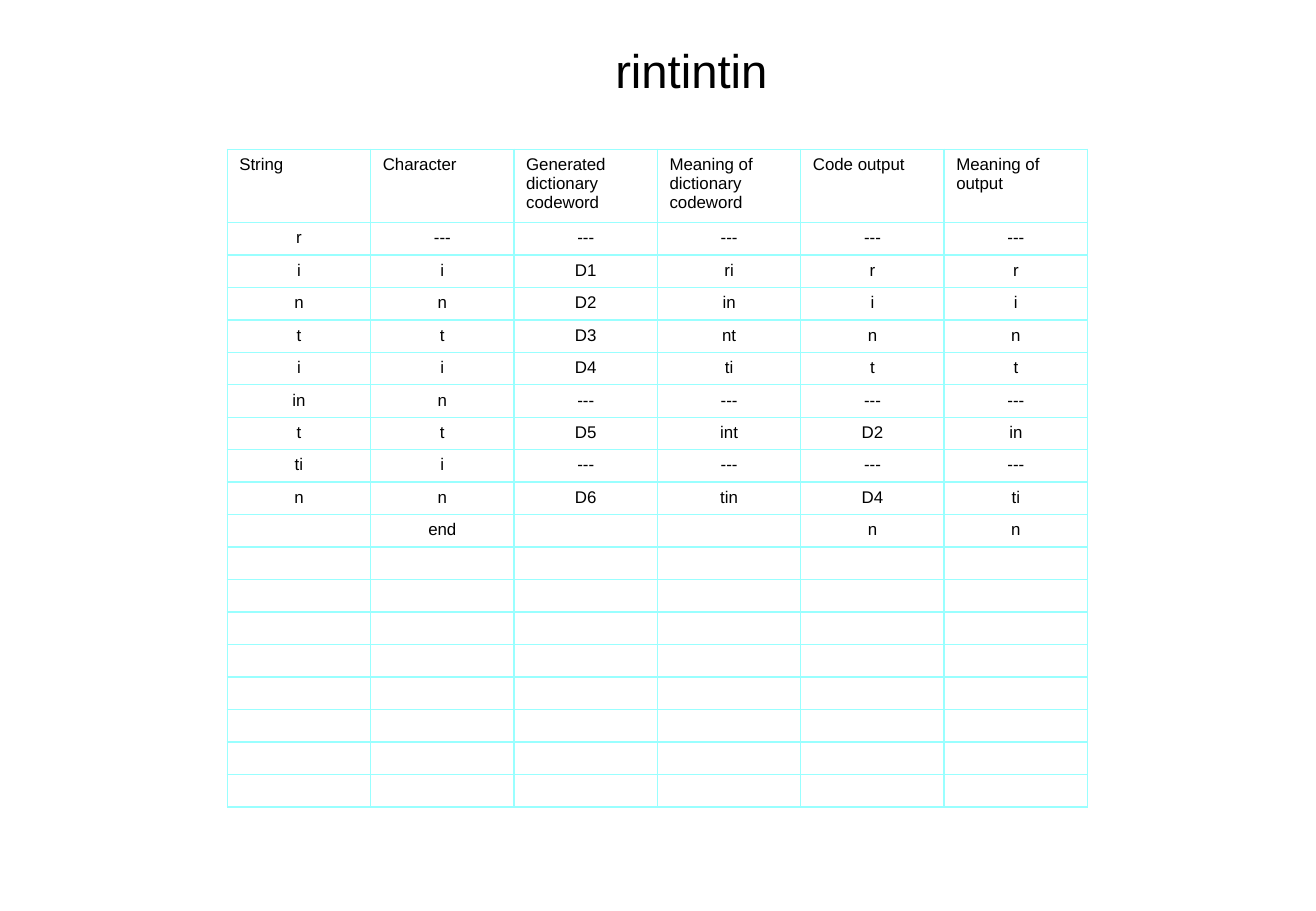
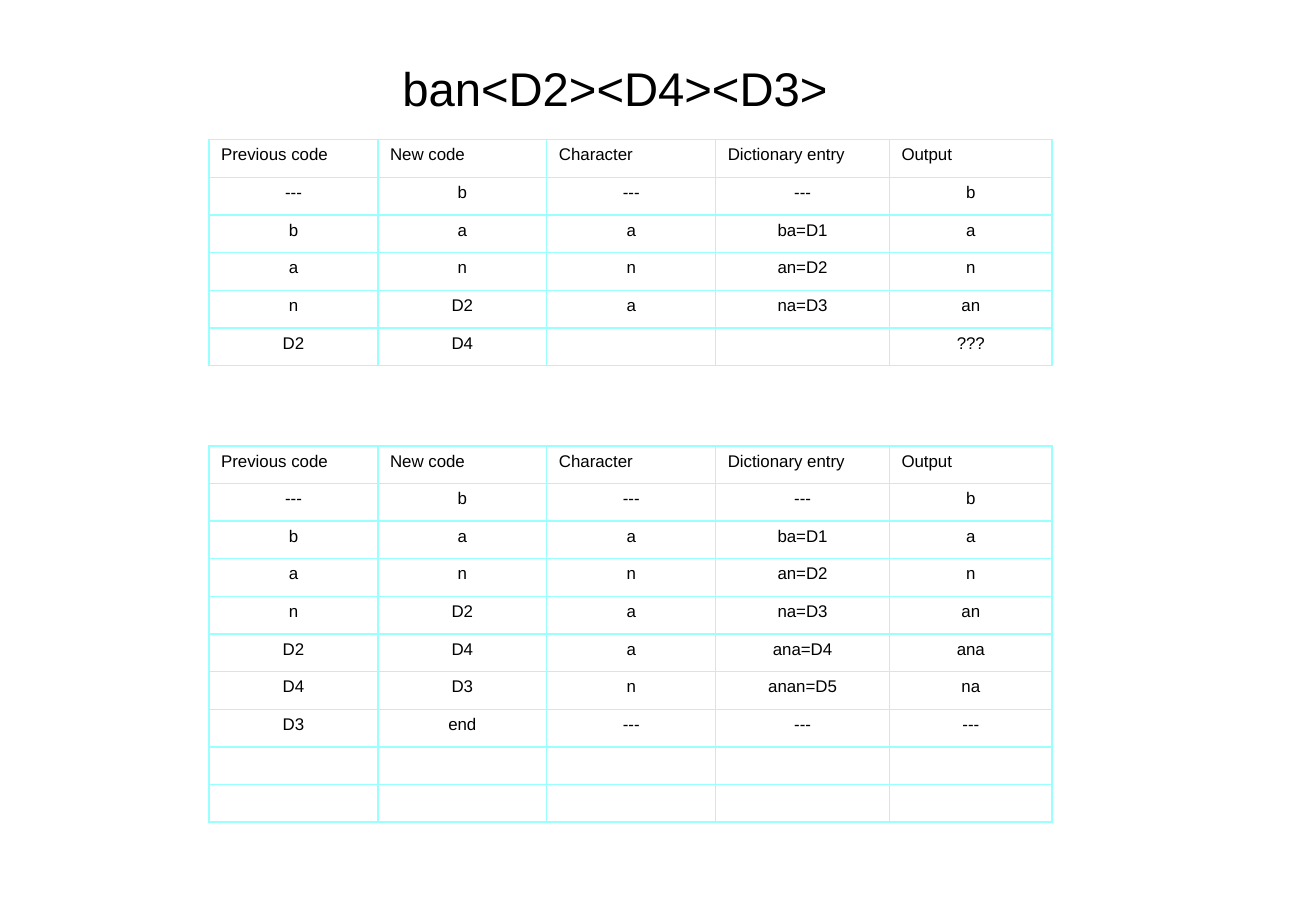
"""Build two slides that trace dictionary compression and decompression."""
from lxml import etree
from pptx import Presentation
from pptx.dml.color import RGBColor
from pptx.enum.text import MSO_AUTO_SIZE, PP_ALIGN
from pptx.oxml.ns import qn
from pptx.util import Inches, Pt

LEFT, CENTER = PP_ALIGN.LEFT, PP_ALIGN.CENTER
FIT_SHAPE = MSO_AUTO_SIZE.SHAPE_TO_FIT_TEXT
BLACK = RGBColor(0x00, 0x00, 0x00)
WHITE = RGBColor(0xFF, 0xFF, 0xFF)
CYAN = RGBColor(0x99, 0xFF, 0xFF)
FONT = "Arial"
TITLE_SIZE, CELL_SIZE, BORDER = Pt(28), Pt(10), Pt(1)

ENCODE_HEADER = ("String", "Character", "Generated dictionary codeword",
                 "Meaning of dictionary codeword", "Code output", "Meaning of output")
ENCODE_STEPS = [
    ("r", "---", "---", "---", "---", "---"),
    ("i", "i", "D1", "ri", "r", "r"),
    ("n", "n", "D2", "in", "i", "i"),
    ("t", "t", "D3", "nt", "n", "n"),
    ("i", "i", "D4", "ti", "t", "t"),
    ("in", "n", "---", "---", "---", "---"),
    ("t", "t", "D5", "int", "D2", "in"),
    ("ti", "i", "---", "---", "---", "---"),
    ("n", "n", "D6", "tin", "D4", "ti"),
    ("", "end", "", "", "n", "n"),
]
DECODE_HEADER = ("Previous code", "New code", "Character", "Dictionary entry", "Output")
DECODE_START = [
    ("---", "b", "---", "---", "b"),
    ("b", "a", "a", "ba=D1", "a"),
    ("a", "n", "n", "an=D2", "n"),
    ("n", "D2", "a", "na=D3", "an"),
]
DECODE_STUCK = DECODE_START + [("D2", "D4", "", "", "???")]
DECODE_SOLVED = DECODE_START + [
    ("D2", "D4", "a", "ana=D4", "ana"),
    ("D4", "D3", "n", "anan=D5", "na"),
    ("D3", "end", "---", "---", "---"),
]
ENCODE_WIDTHS = [1.18] * 6
DECODE_WIDTHS = [1.39, 1.39, 1.39, 1.43, 1.34]

SLIDES = [
    {"title": "rintintin", "title_at": (2.66, 0.29), "tables": [
        {"at": (1.87, 1.23), "header": ENCODE_HEADER, "steps": ENCODE_STEPS, "spare": 8,
         "widths": ENCODE_WIDTHS, "header_height": 0.57, "row_height": 0.25}]},
    {"title": "ban<D2><D4><D3>", "title_at": (2.03, 0.44), "tables": [
        {"at": (1.72, top), "header": DECODE_HEADER, "steps": steps, "spare": spare,
         "widths": DECODE_WIDTHS, "header_height": 0.31, "row_height": 0.31}
        for top, steps, spare in ((1.15, DECODE_STUCK, 0), (3.67, DECODE_SOLVED, 2))]},
]


def add_text(para, text, size, align):
    para.alignment = align
    span = para.add_run()
    span.text = text
    span.font.name = FONT
    span.font.size = size
    span.font.color.rgb = BLACK


def add_title(page, text, at):
    box = page.shapes.add_textbox(*map(Inches, at), Inches(6.06), Inches(0.57))
    box.text_frame.word_wrap = True
    box.text_frame.auto_size = FIT_SHAPE
    add_text(box.text_frame.paragraphs[0], text, TITLE_SIZE, CENTER)


def style_cell(cell):
    properties = cell._tc.get_or_add_tcPr()
    for side in ("lnL", "lnR", "lnT", "lnB"):
        line = etree.SubElement(properties, qn(f"a:{side}"), w=str(BORDER))
        fill = etree.SubElement(line, qn("a:solidFill"))
        etree.SubElement(fill, qn("a:srgbClr"), val=str(CYAN))
    cell.fill.solid()
    cell.fill.fore_color.rgb = WHITE


def add_table(page, at, header, steps, spare, widths, header_height, row_height):
    rows = [header, *steps] + [("",) * len(header)] * spare
    heights = [header_height] + [row_height] * (len(rows) - 1)
    table = page.shapes.add_table(len(rows), len(widths), *map(Inches, at),
                                  Inches(sum(widths)), Inches(sum(heights))).table
    table.first_row = table.horz_banding = False
    for column, width in zip(table.columns, widths):
        column.width = Inches(width)
    for index, (values, height) in enumerate(zip(rows, heights)):
        table.rows[index].height = Inches(height)
        for cell, value in zip(table.rows[index].cells, values):
            style_cell(cell)
            para = cell.text_frame.paragraphs[0]
            if value:
                add_text(para, value, CELL_SIZE, CENTER if index else LEFT)
            else:
                etree.SubElement(para._p, qn("a:endParaRPr"), sz=str(int(CELL_SIZE.pt * 100)))


def main():
    deck = Presentation()
    deck.slide_width, deck.slide_height = Inches(10.83), Inches(7.5)
    for content in SLIDES:
        page = deck.slides.add_slide(deck.slide_layouts[6])
        add_title(page, content["title"], content["title_at"])
        for table in content["tables"]:
            add_table(page, **table)
    deck.save("out.pptx")


if __name__ == "__main__":
    main()
